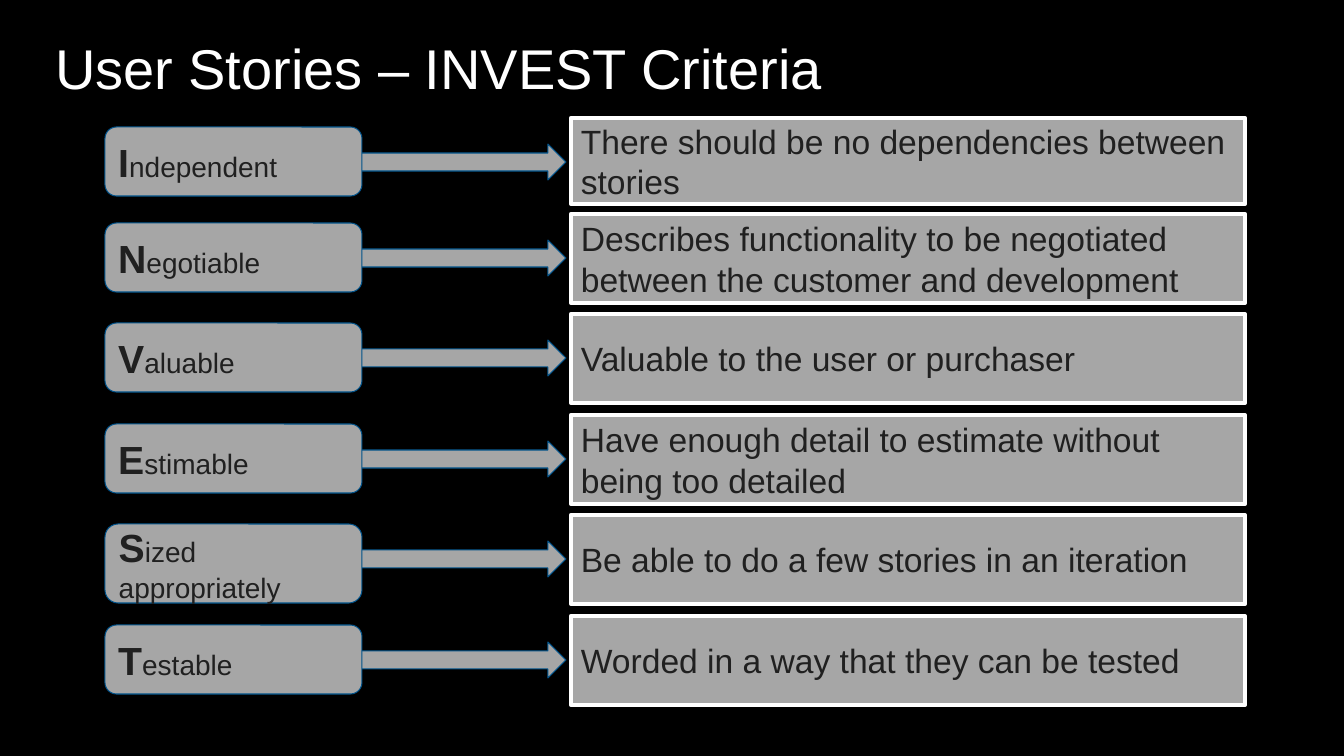
from pptx import Presentation
from pptx import util as u
from pptx.dml.color import RGBColor
from pptx.enum import shapes, text

PX = 914400 / 100.8


def px(n):
    return u.Emu(round(n * PX))


def rgb(value):
    return RGBColor.from_string(value)


GREY, BLUE, WHITE, INK = "A6A6A6", "00528A", "FFFFFF", "202020"
KIND = shapes.MSO_SHAPE

# arrow top, box height, description height, criterion, description
CRITERIA = [
    (144, 69, 86, "Independent", "There should be no dependencies between stories"),
    (240, 69, 89, "Negotiable",
     "Describes functionality to be negotiated between the customer and development"),
    (340, 69, 89, "Valuable", "Valuable to the user or purchaser"),
    (441, 69, 89, "Estimable", "Have enough detail to estimate without being too detailed"),
    (541, 79, 89, "Sized appropriately", "Be able to do a few stories in an iteration"),
    (642, 69, 89, "Testable", "Worded in a way that they can be tested"),
]

prs = Presentation()
prs.slide_width, prs.slide_height = px(1344), px(756)
slide = prs.slides.add_slide(prs.slide_layouts[5])
slide.background.fill.solid()
slide.background.fill.fore_color.rgb = rgb("000000")

title = slide.shapes.title
title.left, title.top, title.width, title.height = px(42), px(25), px(1288), px(84)
frame = title.text_frame
frame.auto_size = text.MSO_AUTO_SIZE.NONE
frame.word_wrap = True
frame.vertical_anchor = text.MSO_ANCHOR.MIDDLE
frame.margin_left = frame.margin_right = px(13)
frame.margin_top = frame.margin_bottom = px(7)
heading = frame.paragraphs[0]
heading.alignment = text.PP_ALIGN.LEFT
run = heading.add_run()
run.text = "User Stories – INVEST Criteria"
run.font.size, run.font.name = u.Pt(40), "Arial"
run.font.color.rgb = rgb(WHITE)

for top, box_height, description_height, criterion, description in CRITERIA:
    parts = [
        (KIND.RIGHT_ARROW, 357, top, 209, 36, BLUE, 0.75, []),
        (KIND.ROUNDED_RECTANGLE, 105, top - 17, 257, box_height, BLUE, 0.75,
         [(criterion[0], 28, True), (criterion[1:], 20, False)]),
        (KIND.RECTANGLE, 571, top - 26, 674, description_height, WHITE, 3,
         [(description, 24, False)]),
    ]
    for kind, left, part_top, width, height, line, weight, runs in parts:
        part = slide.shapes.add_shape(kind, px(left), px(part_top), px(width), px(height))
        part.shadow.inherit = False
        part.fill.solid()
        part.fill.fore_color.rgb = rgb(GREY)
        part.line.color.rgb = rgb(line)
        part.line.width = u.Pt(weight)
        frame = part.text_frame
        frame.word_wrap = True
        frame.vertical_anchor = text.MSO_ANCHOR.MIDDLE
        frame.paragraphs[0].alignment = text.PP_ALIGN.LEFT
        for words, size, bold in runs:
            run = frame.paragraphs[0].add_run()
            run.text = words
            run.font.size, run.font.bold, run.font.name = u.Pt(size), bold, "Arial"
            run.font.color.rgb = rgb(INK)

prs.save("out.pptx")
